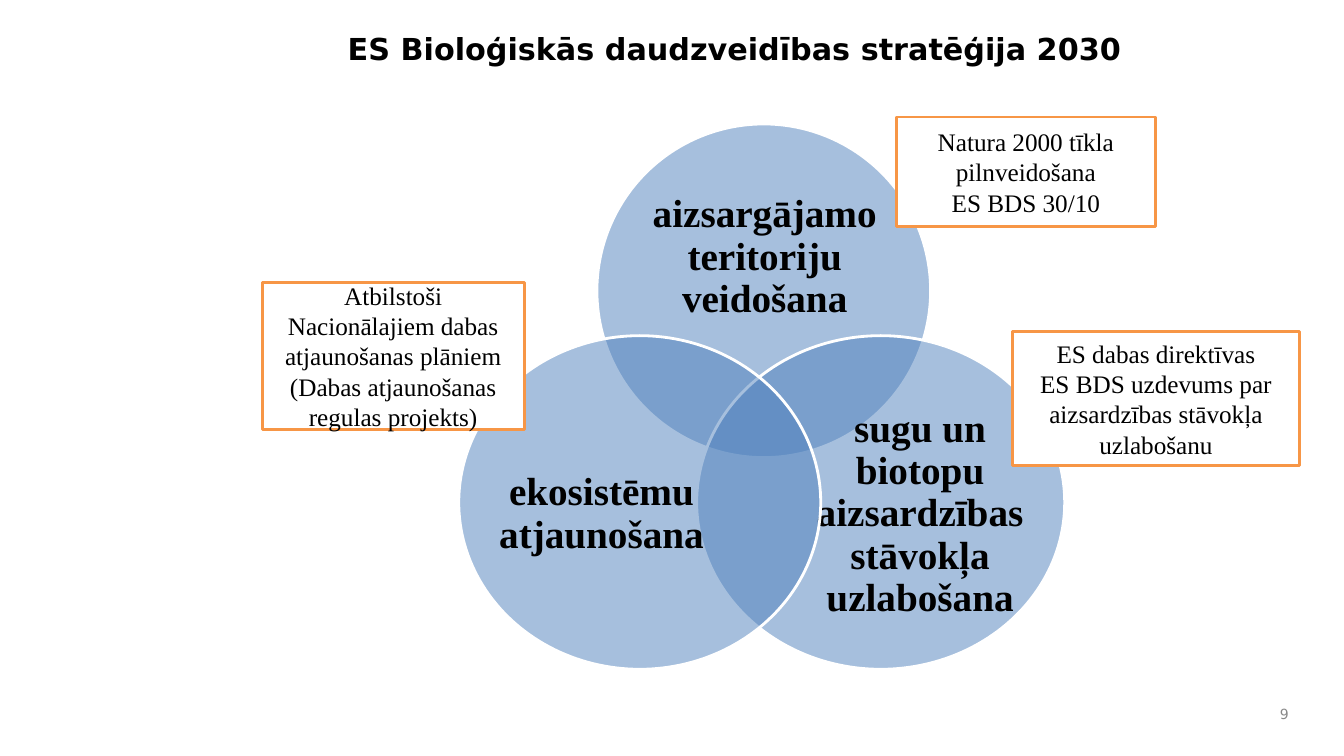
import pptx
import pptx.util
import pptx.dml.color
import pptx.enum.shapes
import pptx.enum.text
import pptx.oxml.ns
import lxml.etree

Inches = pptx.util.Inches
RGBColor = pptx.dml.color.RGBColor
SHAPE = pptx.enum.shapes.MSO_SHAPE
ALIGN = pptx.enum.text.PP_ALIGN
ANCHOR = pptx.enum.text.MSO_ANCHOR
qn = pptx.oxml.ns.qn

BLACK = RGBColor(0x00, 0x00, 0x00)
WHITE = RGBColor(0xFF, 0xFF, 0xFF)
BLUE = RGBColor(0x4F, 0x81, 0xBD)
ORANGE = RGBColor(0xF7, 0x96, 0x46)
GRAY = RGBColor(0x89, 0x89, 0x89)
SANS = "DejaVu Sans"
SERIF = "Times New Roman"

CIRCLES = [
    ((5.92, 1.23, 3.31, 3.31), (6.37, 1.81, 2.43, 1.49),
     "aizsargājamo teritoriju veidošana"),
    ((6.91, 3.33, 3.65, 3.31), (8.03, 4.19, 2.19, 1.82),
     "sugu un biotopu aizsardzības stāvokļa uzlabošana"),
    ((4.55, 3.33, 3.59, 3.31), (4.89, 4.19, 2.15, 1.82),
     "ekosistēmu atjaunošana"),
]
NOTES = [
    ((10.04, 3.29, 2.85, 1.33),
     ["ES dabas direktīvas",
      "ES BDS uzdevums par aizsardzības stāvokļa uzlabošanu"]),
    ((8.89, 1.16, 2.57, 1.09),
     ["Natura 2000 tīkla pilnveidošana", "ES BDS 30/10"]),
    ((2.6, 2.8, 2.6, 1.46),
     ["Atbilstoši Nacionālajiem dabas atjaunošanas plāniem "
      "(Dabas atjaunošanas regulas projekts)"]),
]


class Deck:
    """Holds the style and the current slide, and draws each kind of element."""

    def __init__(self):
        self.prs = pptx.Presentation()
        self.prs.slide_width = Inches(13.33)
        self.prs.slide_height = Inches(7.5)
        self.s = self.prs.slides.add_slide(self.prs.slide_layouts[6])

    def set_text(self, sp, lines, size, font=SERIF, color=BLACK, bold=False,
                 align=ALIGN.CENTER, anchor=ANCHOR.MIDDLE, spacing=None):
        tf = sp.text_frame
        tf.word_wrap = True
        tf.vertical_anchor = anchor
        for i, line in enumerate(lines):
            p = tf.paragraphs[0] if i == 0 else tf.add_paragraph()
            p.text = line
            p.alignment = align
            p.line_spacing = spacing
            p.font.name = font
            p.font.size = pptx.util.Pt(size)
            p.font.bold = bold
            p.font.color.rgb = color

    def text(self, box, line, size, inset=True, **style):
        sp = self.s.shapes.add_textbox(*map(Inches, box))
        if not inset:
            tf = sp.text_frame
            tf.margin_left = tf.margin_right = 0
            tf.margin_top = tf.margin_bottom = 0
        self.set_text(sp, [line], size, **style)

    def shape(self, kind, box, fill, line):
        sp = self.s.shapes.add_shape(kind, *map(Inches, box))
        sp.shadow.inherit = False
        sp.fill.solid()
        sp.fill.fore_color.rgb = fill
        sp.line.color.rgb = line
        sp.line.width = pptx.util.Pt(2)
        return sp

    def circle(self, box, label_box, label):
        sp = self.shape(SHAPE.OVAL, box, BLUE, WHITE)
        clr = sp.element.spPr.find(qn("a:solidFill")).find(qn("a:srgbClr"))
        lxml.etree.SubElement(clr, qn("a:alpha")).set("val", "50000")
        self.text(label_box, label, 28, inset=False, bold=True, spacing=0.9)

    def note(self, box, lines):
        sp = self.shape(SHAPE.RECTANGLE, box, WHITE, ORANGE)
        self.set_text(sp, lines, 18)


def main():
    deck = Deck()
    deck.text((3.35, 0.25, 8.48, 0.85),
              "ES Bioloģiskās daudzveidības stratēģija 2030", 21.6,
              font=SANS, bold=True, align=ALIGN.LEFT, anchor=ANCHOR.TOP)
    for circle in CIRCLES:
        deck.circle(*circle)
    deck.text((12.44, 6.92, 0.44, 0.33), "9", 10,
              font=SANS, color=GRAY, align=ALIGN.RIGHT)
    for note in NOTES:
        deck.note(*note)
    deck.prs.save("out.pptx")


if __name__ == "__main__":
    main()
